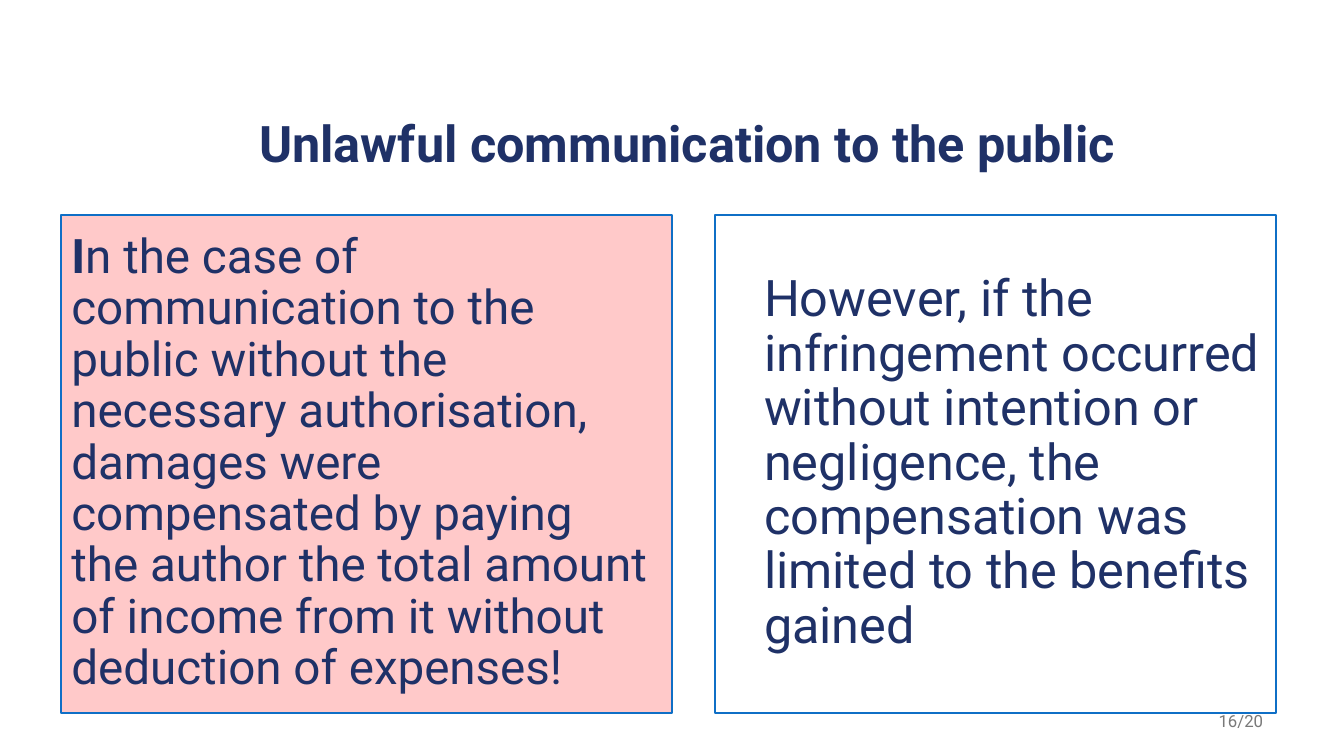
from pptx import Presentation
from pptx.dml.color import RGBColor
from pptx.enum.shapes import MSO_SHAPE
from pptx.enum.text import MSO_ANCHOR, PP_ALIGN
from pptx.util import Pt

RECTANGLE = MSO_SHAPE.RECTANGLE
MIDDLE = MSO_ANCHOR.MIDDLE
LEFT, CENTER, RIGHT = PP_ALIGN.LEFT, PP_ALIGN.CENTER, PP_ALIGN.RIGHT

NAVY = RGBColor(0x1F, 0x31, 0x67)
GREY = RGBColor(0x79, 0x79, 0x79)
BLUE = RGBColor(0x0F, 0x6F, 0xC6)
PINK = RGBColor(0xFF, 0xC9, 0xC9)
FONT = "Roboto"
PANEL_TOP, PANEL_HEIGHT = 153.4, 355.7


def style_text(frame, size, color=NAVY, bold=False, align=LEFT, spacing=0.9):
    frame.word_wrap = True
    frame.vertical_anchor = MIDDLE
    for paragraph in frame.paragraphs:
        paragraph.alignment = align
        paragraph.line_spacing = spacing
        for run in paragraph.runs:
            run.font.name = FONT
            run.font.size = Pt(size)
            run.font.bold = bold
            run.font.color.rgb = color


def add_label(slide, left, top, width, height, text, size, **style):
    label = slide.shapes.add_textbox(Pt(left), Pt(top), Pt(width), Pt(height))
    label.text_frame.text = text
    style_text(label.text_frame, size, **style)


def add_panel(slide, left, width, text, size, fill=None):
    panel = slide.shapes.add_shape(
        RECTANGLE, Pt(left), Pt(PANEL_TOP), Pt(width), Pt(PANEL_HEIGHT))
    panel.shadow.inherit = False
    if fill is None:
        panel.fill.background()
    else:
        panel.fill.solid()
        panel.fill.fore_color.rgb = fill
    panel.line.color.rgb = BLUE
    panel.line.width = Pt(1.5)
    panel.text_frame.text = text
    style_text(panel.text_frame, size)
    return panel.text_frame


def embolden_initial(frame):
    paragraph = frame.paragraphs[0]
    text = paragraph.text
    paragraph.text = text[0]
    first_line, second_line = text[1:].split("\v")
    paragraph.add_run().text = first_line
    paragraph.add_line_break()
    paragraph.add_run().text = second_line
    style_text(frame, 34)
    paragraph.runs[0].font.bold = True


def main():
    presentation = Presentation()
    presentation.slide_width = Pt(960)
    presentation.slide_height = Pt(540)
    slide = presentation.slides.add_slide(presentation.slide_layouts[6])

    add_label(slide, 61.9, 77, 858.2, 55.4,
              "Unlawful communication to the public", 36, bold=True, align=CENTER)
    add_label(slide, 693.4, 500.4, 216, 28.8, "16/20", 12,
              color=GREY, align=RIGHT, spacing=1.0)

    damages = add_panel(
        slide, 43.9, 436.3,
        "In the case of communication to the public without the necessary "
        "authorisation, damages were compensated by paying\vthe author the total "
        "amount of income from it without deduction of expenses!", 34, PINK)
    embolden_initial(damages)

    limitation = add_panel(
        slide, 510.5, 401,
        "However, if the infringement occurred without intention or negligence, "
        "the compensation was limited to the benefits gained", 36)
    limitation.margin_left = Pt(35.3)

    presentation.save("out.pptx")


if __name__ == "__main__":
    main()
